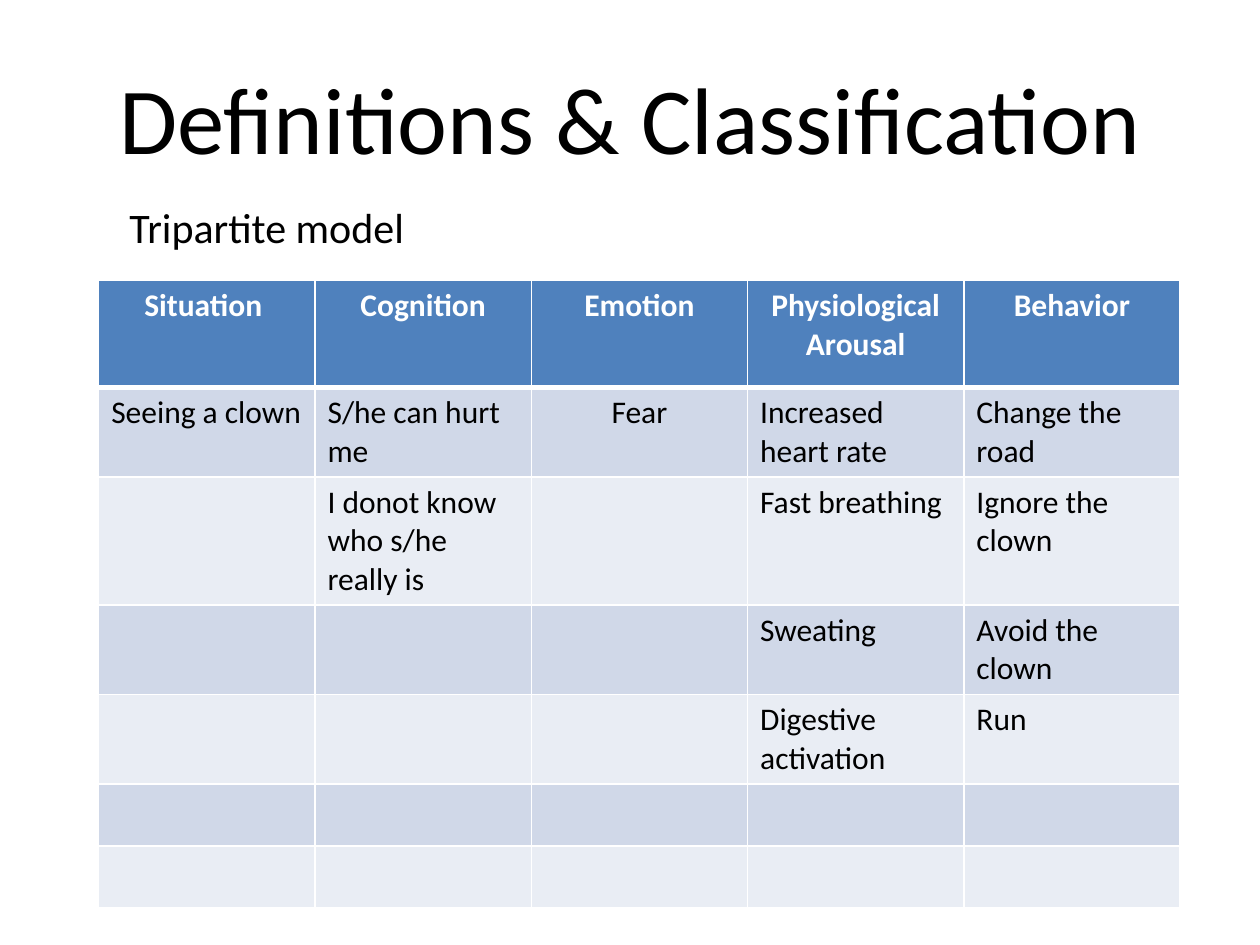
"""Build the slide on the tripartite model of fear."""
from dataclasses import dataclass

from lxml.etree import SubElement
from pptx import Presentation
from pptx.dml.color import RGBColor
from pptx.enum.text import MSO_ANCHOR, PP_ALIGN
from pptx.oxml.ns import qn
from pptx.slide import Slide
from pptx.table import _Cell
from pptx.util import Cm, Pt

HUES = {"ink": "000000", "paper": "FFFFFF", "head": "4F81BD",
        "odd": "D0D8E8", "even": "E9EDF4"}
HEADS = ["Situation ", "Cognition", "Emotion", "Physiological Arousal", "Behavior"]
ROWS = [
    ["Seeing a clown", "S/he can hurt me", "Fear", "Increased heart rate", "Change the road"],
    ["", "I donot know who s/he really is", "", "Fast breathing", "Ignore the clown"],
    ["", "", "", "Sweating", "Avoid the clown"],
    ["", "", "", "Digestive activation", "Run"],
    [""] * 5,
    [""] * 5,
]


@dataclass
class Label:
    """A line of text with its box in centimetres."""
    text: str
    box: tuple[float, float, float, float]
    size: int
    align: PP_ALIGN
    anchor: MSO_ANCHOR


LABELS = [
    Label("Definitions & Classification", (1.27, 0.76, 22.86, 3.18), 54,
          PP_ALIGN.CENTER, MSO_ANCHOR.MIDDLE),
    Label("Tripartite model", (2.36, 3.94, 6.07, 1.27), 24,
          PP_ALIGN.LEFT, MSO_ANCHOR.TOP),
]


def write(frame, text: str, size: int, align: PP_ALIGN, hue: str = "ink",
          bold: bool = False) -> None:
    """Put styled text in a frame."""
    para = frame.paragraphs[0]
    para.alignment = align
    if not text:
        para.font.size = Pt(size)
        return
    run = para.add_run()
    run.text = text
    style = {"name": "Calibri", "size": Pt(size), "bold": bold}
    for key, value in style.items():
        setattr(run.font, key, value)
    run.font.color.rgb = RGBColor.from_string(HUES[hue])


def draw_label(slide: Slide, label: Label) -> None:
    """Add a label as a text box."""
    frame = slide.shapes.add_textbox(*map(Cm, label.box)).text_frame
    style = {"word_wrap": True, "vertical_anchor": label.anchor}
    for key, value in style.items():
        setattr(frame, key, value)
    write(frame, label.text, label.size, label.align)


def edge(cell: _Cell, widths: dict[str, int]) -> None:
    """Give a cell white borders of the given point widths."""
    props = cell._tc.get_or_add_tcPr()
    for side, width in widths.items():
        line = SubElement(props, qn(f"a:ln{side}"), w=str(Pt(width)))
        fill = SubElement(line, qn("a:solidFill"))
        SubElement(fill, qn("a:srgbClr"), val=HUES["paper"])


def draw_table(slide: Slide) -> None:
    """Add the table of situations and responses."""
    grid = [HEADS, *ROWS]
    table = slide.shapes.add_table(len(grid), len(HEADS), Cm(1.99), Cm(5.65),
                                   Cm(21.8), Cm(9.6)).table
    for col in table.columns:
        col.width = Cm(4.36)
    for r, texts in enumerate(grid):
        table.rows[r].height = Cm(1.25 if r else 2.16)
        hue = ("odd" if r % 2 else "even") if r else "head"
        for c, text in enumerate(texts):
            cell = table.cell(r, c)
            edge(cell, {"L": 1, "R": 1, "T": 3 if r == 1 else 1, "B": 1 if r else 3})
            cell.fill.solid()
            cell.fill.fore_color.rgb = RGBColor.from_string(HUES[hue])
            mid = r == 0 or text == "Fear"
            write(cell.text_frame, text, 18, PP_ALIGN.CENTER if mid else PP_ALIGN.LEFT,
                  "ink" if r else "paper", r == 0)


def main() -> None:
    """Build and save the deck."""
    deck = Presentation()
    deck.slide_width, deck.slide_height = Cm(25.4), Cm(19.05)
    slide = deck.slides.add_slide(deck.slide_layouts[6])
    draw_table(slide)
    for label in LABELS:
        draw_label(slide, label)
    deck.save("out.pptx")


if __name__ == "__main__":
    main()
